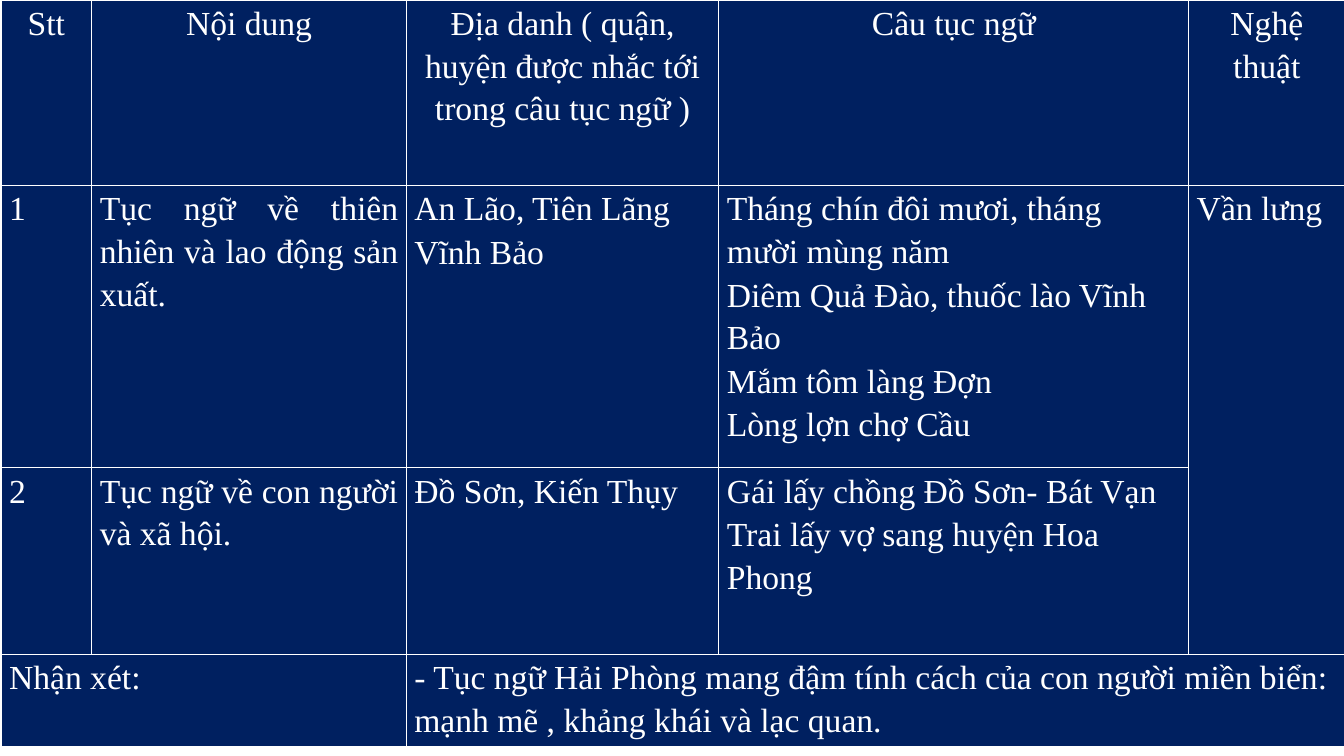
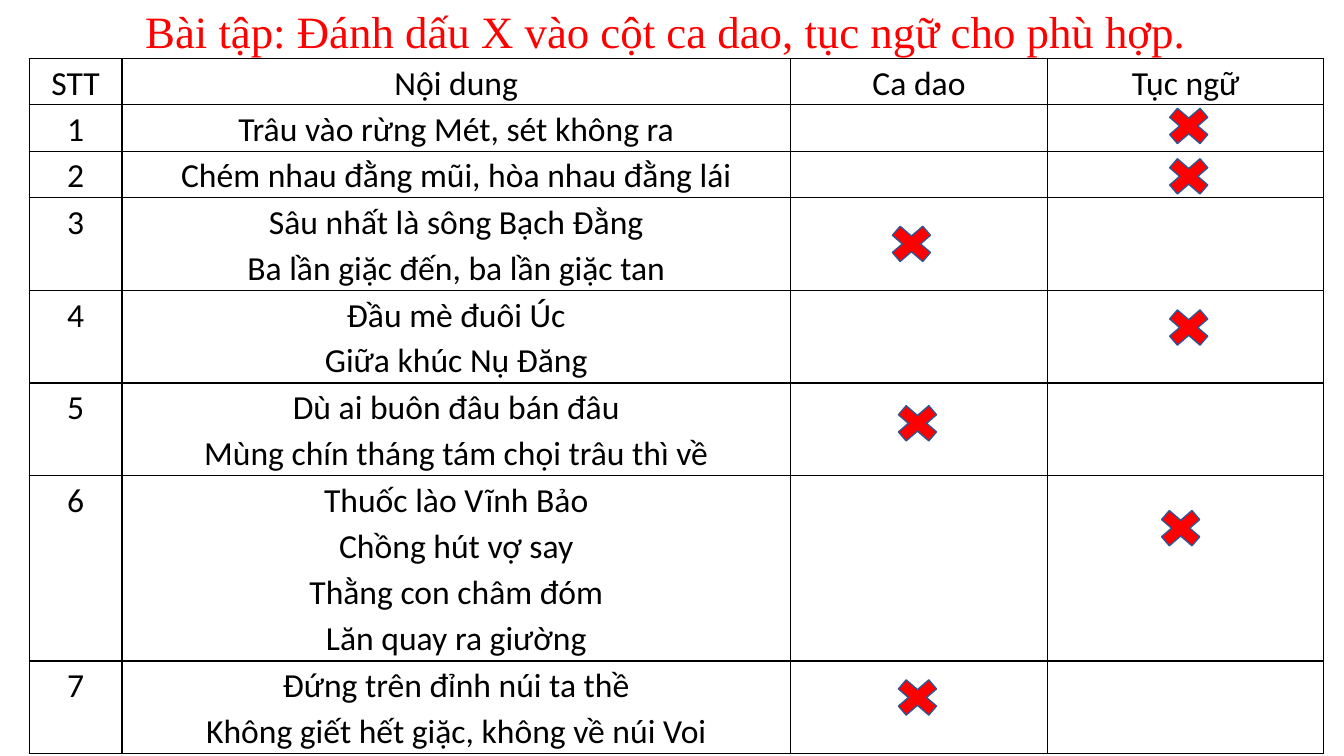
import pptx
import pptx.util
import pptx.dml.color
import pptx.enum.shapes
import pptx.enum.text
import pptx.oxml.ns
from lxml import etree

Inches = pptx.util.Inches
Pt = pptx.util.Pt
ALIGN = pptx.enum.text.PP_ALIGN

COLORS = {
    "white": "FFFFFF",
    "black": "000000",
    "navy": "002060",
    "red": "FF0000",
    "mark_line": "325491",
}
RGB = {name: pptx.dml.color.RGBColor.from_string(value) for name, value in COLORS.items()}
SERIF = "Times New Roman"
LINE_SPACING = 1.15


def write_lines(text_frame, lines, paragraph_format, font_format, color):
    """Write one paragraph per line, all in the same format."""
    for index, line in enumerate(lines):
        paragraph = text_frame.paragraphs[0] if index == 0 else text_frame.add_paragraph()
        paragraph.text = line
        for name, value in paragraph_format.items():
            setattr(paragraph, name, value)
        for name, value in font_format.items():
            setattr(paragraph.font, name, value)
        paragraph.font.color.rgb = RGB[color]


def add_grid(slide, left, top, widths, heights, rows, alignments, look):
    """Add a ruled table; alignments holds one value per column, the header is centred."""
    frame = slide.shapes.add_table(len(heights), len(widths), Inches(left), Inches(top),
                                   Inches(sum(widths)), Inches(sum(heights)))
    table = frame.table
    table.first_row = table.horz_banding = False
    for column, width in zip(table.columns, widths):
        column.width = Inches(width)
    for row, height in zip(table.rows, heights):
        row.height = Inches(height)
    margins = {"margin_left": Inches(look["margin"]), "margin_right": Inches(look["margin"]),
               "margin_top": 0, "margin_bottom": 0}
    for row_index, row in enumerate(rows):
        for column_index, text in enumerate(row):
            cell = table.cell(row_index, column_index)
            for name, value in margins.items():
                setattr(cell, name, value)
            properties = cell._tc.get_or_add_tcPr()
            for side in ("lnL", "lnR", "lnT", "lnB"):
                line = etree.SubElement(properties, pptx.oxml.ns.qn("a:" + side), w=str(Pt(1)))
                fill = etree.SubElement(line, pptx.oxml.ns.qn("a:solidFill"))
                etree.SubElement(fill, pptx.oxml.ns.qn("a:srgbClr"), val=COLORS[look["ink"]])
            if look["fill"]:
                cell.fill.solid()
                cell.fill.fore_color.rgb = RGB[look["fill"]]
            else:
                cell.fill.background()
            if text:
                alignment = ALIGN.CENTER if row_index == 0 else alignments[column_index]
                write_lines(cell.text_frame, text.split("\n"),
                            {"alignment": alignment, "line_spacing": look["line_spacing"],
                             "space_after": Pt(look["space_after"])},
                            {"size": Pt(24), "name": look["font"]}, look["ink"])
    return table


presentation = pptx.Presentation()
presentation.slide_width = Inches(13.33)
presentation.slide_height = Inches(7.5)
TITLE_ONLY, BLANK = presentation.slide_layouts[5], presentation.slide_layouts[6]

# Slide 1: proverbs by subject
slide = presentation.slides.add_slide(BLANK)
proverb_rows = [
    ["Stt", "Nội dung", "Địa danh ( quận, huyện được nhắc tới trong câu tục ngữ )",
     "Câu tục ngữ", "Nghệ thuật"],
    ["1", "Tục ngữ về thiên nhiên và lao động sản xuất.", "An Lão, Tiên Lãng\nVĩnh Bảo",
     "Tháng chín đôi mươi, tháng mười mùng năm\nDiêm Quả Đào, thuốc lào Vĩnh Bảo\n"
     "Mắm tôm làng Đợn\nLòng lợn chợ Cầu", "Vần lưng"],
    ["2", "Tục ngữ về con người và xã hội.", "Đồ Sơn, Kiến Thụy",
     "Gái lấy chồng Đồ Sơn- Bát Vạn\nTrai lấy vợ sang huyện Hoa Phong", ""],
    ["Nhận xét:", "", "- Tục ngữ Hải Phòng mang đậm tính cách của con người miền biển: "
     "mạnh mẽ , khảng khái và lạc quan.", "", ""],
]
proverb_table = add_grid(
    slide, 0.01, 0, [0.9, 3.12, 3.1, 4.66, 1.55], [1.84, 2.8, 1.85, 0.92], proverb_rows,
    [ALIGN.JUSTIFY] * 2 + [ALIGN.LEFT] * 3,
    {"font": SERIF, "ink": "white", "fill": "navy", "margin": 0.08,
     "line_spacing": LINE_SPACING, "space_after": 0.5})
for first, last in [((1, 4), (2, 4)), ((3, 0), (3, 1)), ((3, 2), (3, 4))]:
    proverb_table.cell(*first).merge(proverb_table.cell(*last))

# Slide 2: exercise with its answers marked
slide = presentation.slides.add_slide(TITLE_ONLY)
title = slide.shapes.title
title_box = {"left": 1.34, "top": -0.09, "width": 10.73, "height": 0.72}
for name, value in title_box.items():
    setattr(title, name, Inches(value))
title_frame_format = {
    "word_wrap": True,
    "auto_size": pptx.enum.text.MSO_AUTO_SIZE.NONE,
    "vertical_anchor": pptx.enum.text.MSO_ANCHOR.TOP,
}
for name, value in title_frame_format.items():
    setattr(title.text_frame, name, value)
write_lines(title.text_frame, ["Bài tập: Đánh dấu X vào cột ca dao, tục ngữ cho phù hợp."],
            {"alignment": ALIGN.LEFT, "line_spacing": LINE_SPACING},
            {"size": Pt(32), "name": SERIF}, "red")

verses = [
    "Trâu vào rừng Mét, sét không ra",
    "Chém nhau đằng mũi, hòa nhau đằng lái",
    "Sâu nhất là sông Bạch Đằng\nBa lần giặc đến, ba lần giặc tan",
    "Đầu mè đuôi Úc\nGiữa khúc Nụ Đăng",
    "Dù ai buôn đâu bán đâu\nMùng chín tháng tám chọi trâu thì về",
    "Thuốc lào Vĩnh Bảo\nChồng hút vợ say\nThằng con châm đóm\nLăn quay ra giường",
    "Đứng trên đỉnh núi ta thề\nKhông giết hết giặc, không về núi Voi",
]
exercise_rows = [["STT", "Nội dung", "Ca dao", "Tục ngữ"]]
exercise_rows += [[str(number), verse, "", ""] for number, verse in enumerate(verses, 1)]
line_height = 0.46
exercise_heights = [line_height * (row[1].count("\n") + 1) for row in exercise_rows]
# Line spacing of 1.12 keeps a 24 pt line within line_height, so no row grows
add_grid(slide, 0.29, 0.58, [0.92, 6.63, 2.55, 2.74], exercise_heights, exercise_rows,
         [ALIGN.CENTER] * 4,
         {"font": "Calibri", "ink": "black", "fill": None, "margin": 0.06,
          "line_spacing": 1.12, "space_after": 0})

answer_marks = [(11.5, 1), (11.5, 1.5), (8.75, 2.17), (11.5, 3),
                (8.81, 3.95), (11.42, 4.99), (8.81, 6.67)]
for left, top in answer_marks:
    mark = slide.shapes.add_shape(pptx.enum.shapes.MSO_SHAPE.MATH_MULTIPLY,
                                  Inches(left), Inches(top), Inches(0.58), Inches(0.5))
    mark.shadow.inherit = False
    mark.fill.solid()
    mark.fill.fore_color.rgb = RGB["red"]
    mark.line.color.rgb = RGB["mark_line"]
    mark.line.width = Pt(1)

presentation.save("out.pptx")
